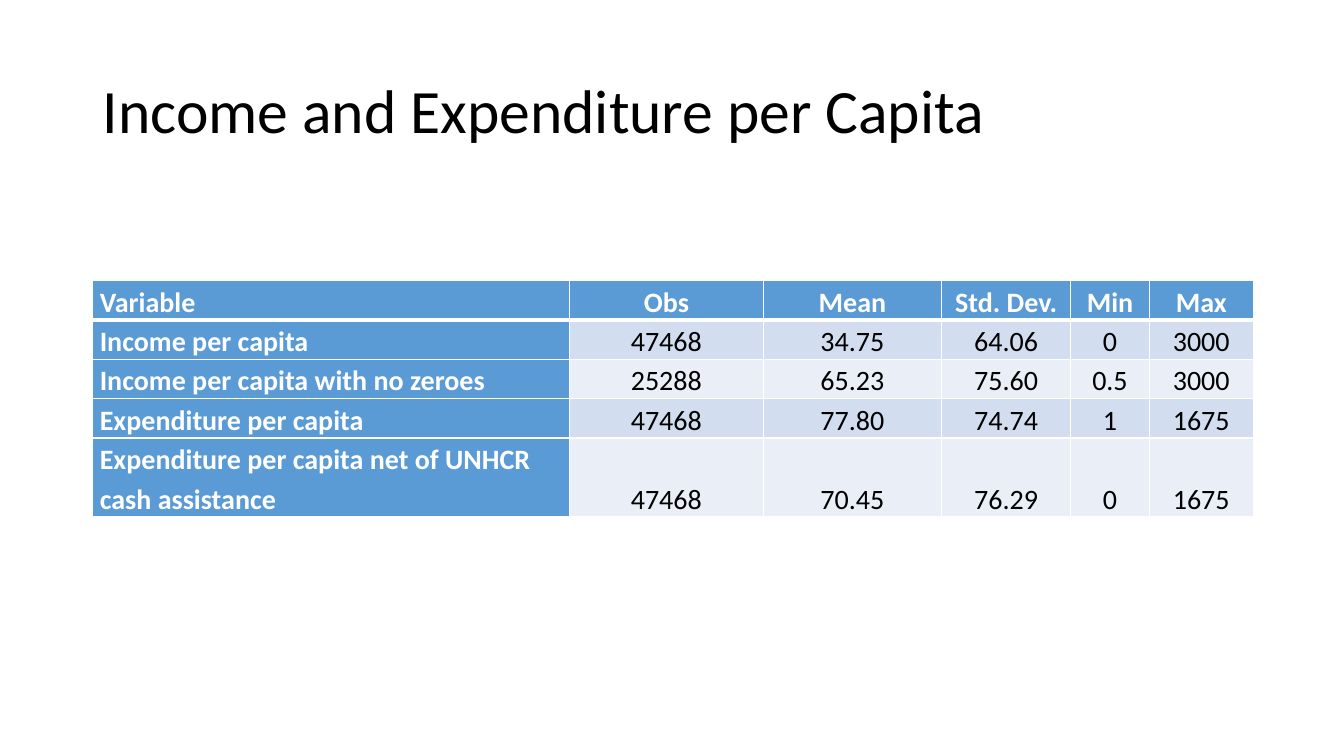
from lxml.etree import SubElement
from pptx import Presentation
from pptx.dml.color import RGBColor
from pptx.enum.text import MSO_ANCHOR as Anchor, PP_ALIGN as Align
from pptx.oxml.ns import qn
from pptx.util import Inches, Pt

COLORS = {
    "text": "000000",
    "white": "FFFFFF",
    "header": "5B9BD5",
    "band_dark": "D2DEEF",
    "band_light": "EAEFF7",
}
FONT = "Calibri"
COLUMN_WIDTHS = [4.73, 1.92, 1.77, 1.28, 0.78, 1.03]
ROW_HEIGHTS = [0.39, 0.39, 0.39, 0.39, 0.78]
STATISTICS = [
    ["Variable", "Obs", "Mean", "Std. Dev.", "Min", "Max"],
    ["Income per capita", "47468", "34.75", "64.06", "0", "3000"],
    ["Income per capita with no zeroes", "25288", "65.23", "75.60", "0.5", "3000"],
    ["Expenditure per capita", "47468", "77.80", "74.74", "1", "1675"],
    ["Expenditure per capita net of UNHCR cash assistance",
     "47468", "70.45", "76.29", "0", "1675"],
]


def write_text(frame, text, size, color="text", bold=False, align=Align.LEFT,
               line_spacing=1.0, space_after=0):
    frame.word_wrap = True
    para = frame.paragraphs[0]
    para.alignment = align
    para.line_spacing = line_spacing
    para.space_after = Pt(space_after)
    span = para.add_run()
    span.text = text
    span.font.name = FONT
    span.font.size = Pt(size)
    span.font.bold = bold
    span.font.color.rgb = RGBColor.from_string(COLORS[color])


def add_borders(cell, widths):
    """Draw white cell borders; widths maps L, R, T, B to points."""
    properties = cell._tc.get_or_add_tcPr()
    for side, width in widths.items():
        line = SubElement(properties, qn(f"a:ln{side}"), w=str(Pt(width)))
        fill = SubElement(line, qn("a:solidFill"))
        SubElement(fill, qn("a:srgbClr"), val=COLORS["white"])


def place_title(page, text, left, top, width, height):
    title = page.shapes.title
    title.left, title.top = Inches(left), Inches(top)
    title.width, title.height = Inches(width), Inches(height)
    title.text_frame.vertical_anchor = Anchor.MIDDLE
    write_text(title.text_frame, text, 44, line_spacing=0.9)


def fill_cell(cell, text, row, column):
    is_heading = row == 0 or column == 0
    add_borders(cell, {"L": 1, "R": 1, "T": 3 if row == 1 else 1,
                       "B": 3 if row == 0 else 1})
    band = "band_dark" if row % 2 else "band_light"
    cell.fill.solid()
    cell.fill.fore_color.rgb = RGBColor.from_string(
        COLORS["header" if is_heading else band])
    cell.vertical_anchor = Anchor.BOTTOM
    cell.margin_left = cell.margin_right = Inches(0.07)
    cell.margin_top = cell.margin_bottom = 0
    write_text(cell.text_frame, text, 20,
               color="white" if is_heading else "text", bold=is_heading,
               align=Align.CENTER if column else Align.LEFT,
               line_spacing=1.15, space_after=8)


def place_statistics_table(page, left, top, width, height):
    table = page.shapes.add_table(
        len(STATISTICS), len(COLUMN_WIDTHS),
        Inches(left), Inches(top), Inches(width), Inches(height)).table
    for column, column_width in zip(table.columns, COLUMN_WIDTHS):
        column.width = Inches(column_width)
    for row, row_height in zip(table.rows, ROW_HEIGHTS):
        row.height = Inches(row_height)
    for row, values in enumerate(STATISTICS):
        for column, value in enumerate(values):
            fill_cell(table.cell(row, column), value, row, column)


def main():
    deck = Presentation()
    deck.slide_width, deck.slide_height = Inches(13.33), Inches(7.5)
    page = deck.slides.add_slide(deck.slide_layouts[5])
    place_title(page, "Income and Expenditure per Capita", 0.92, 0.4, 11.5, 1.45)
    place_statistics_table(page, 0.92, 2.78, sum(COLUMN_WIDTHS), sum(ROW_HEIGHTS))
    deck.save("out.pptx")


if __name__ == "__main__":
    main()
